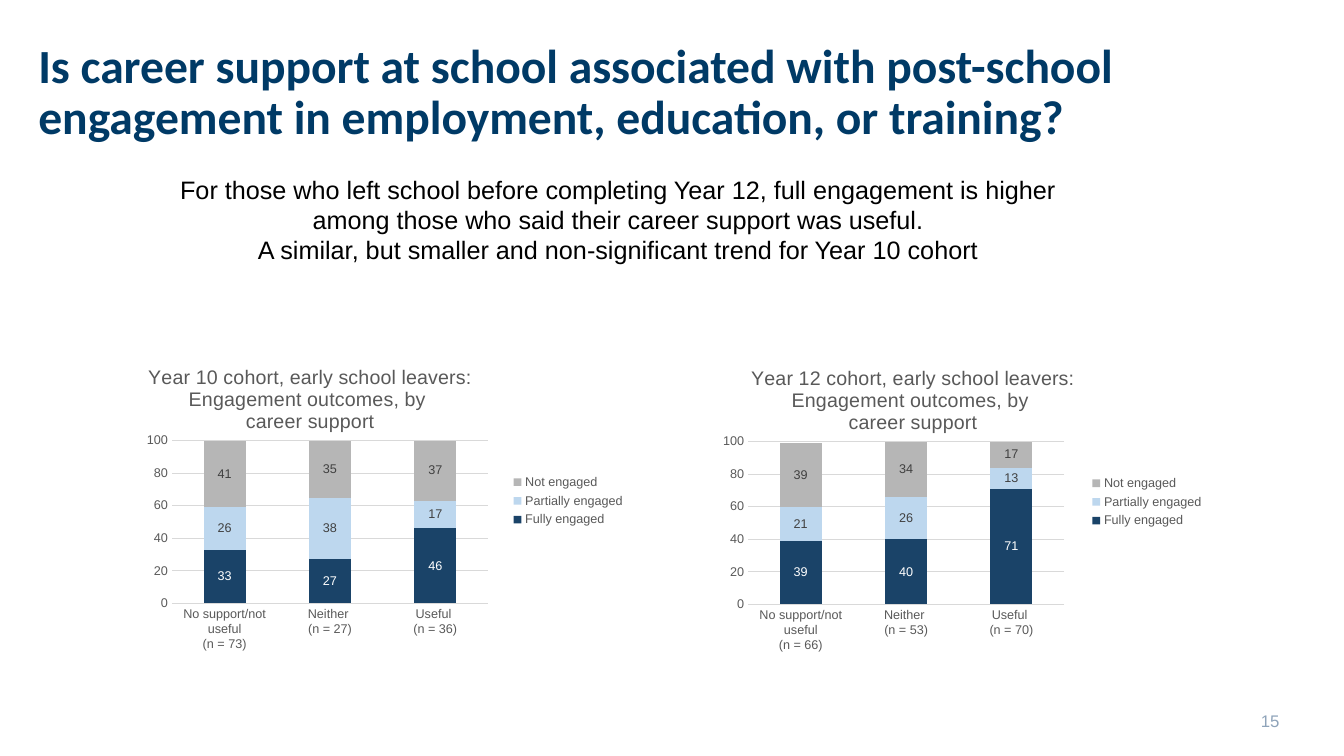
from lxml import etree
from pptx import Presentation
from pptx.chart.data import CategoryChartData
from pptx.dml.color import RGBColor
from pptx.enum.chart import XL_CHART_TYPE, XL_LEGEND_POSITION, XL_TICK_MARK
from pptx.enum.text import MSO_ANCHOR, PP_ALIGN
from pptx.oxml import parse_xml
from pptx.oxml.ns import nsdecls, qn
from pptx.util import Inches, Pt

NAVY = RGBColor(0x00, 0x3A, 0x66)
BLACK = RGBColor(0, 0, 0)
WHITE = RGBColor(0xFF, 0xFF, 0xFF)
PAGE_BLUE = RGBColor(0x8F, 0xA4, 0xBA)
AXIS_TEXT = RGBColor(0x59, 0x59, 0x59)
LABEL_GRAY = RGBColor(0x40, 0x40, 0x40)
GRID = RGBColor(0xD9, 0xD9, 0xD9)
DARK_BLUE = RGBColor(0x1A, 0x43, 0x68)
LIGHT_BLUE = RGBColor(0xBD, 0xD7, 0xEE)
GRAY = RGBColor(0xB6, 0xB6, 0xB6)

HEADING = ("Is career support at school associated with post-school "
           "engagement in employment, education, or training?")
FINDINGS = [
    "For those who left school before completing Year 12, full engagement is higher "
    "among those who said their career support was useful.",
    "A similar, but smaller and non-significant trend for Year 10 cohort",
]
PAGE = "15"
SUPPORT = ["No support/not useful", "Neither ", "Useful "]
OUTCOMES = [
    ("Fully engaged", DARK_BLUE, WHITE),
    ("Partially engaged", LIGHT_BLUE, LABEL_GRAY),
    ("Not engaged", GRAY, LABEL_GRAY),
]
COHORTS = [
    {"year": 10, "sizes": (73, 27, 36), "left": 1.3, "top": 3.43, "plot_left": 0.081,
     "shares": [(33, 27, 46), (26, 38, 17), (41, 35, 37)]},
    {"year": 12, "sizes": (66, 53, 70), "left": 7.04, "top": 3.44, "plot_left": 0.076,
     "shares": [(39, 40, 71), (21, 26, 13), (39, 34, 17)]},
]
CHART_SIZE = (5, 3.08)
PLOT_TOP, PLOT_WIDTH, PLOT_HEIGHT = 0.306, 0.627, 0.524
TITLE_TOP = 0.05


def style(font, size, color, name="Arial", bold=False):
    font.size, font.name, font.bold = Pt(size), name, bold
    font.color.rgb = color


def manual_layout(x, y, w=None, h=None):
    layout = parse_xml(f"<c:layout {nsdecls('c')}><c:manualLayout/></c:layout>")
    settings = [("xMode", "edge"), ("yMode", "edge"), ("x", x), ("y", y)]
    if w is not None:
        settings = [("layoutTarget", "inner")] + settings + [("w", w), ("h", h)]
    for tag, value in settings:
        etree.SubElement(layout[0], qn(f"c:{tag}")).set("val", str(value))
    return layout


def place(parent, layout):
    for old in parent.findall(qn("c:layout")):
        parent.remove(old)
    tx = parent.find(qn("c:tx"))
    parent.insert(0 if tx is None else 1, layout)


def write(frame, lines, size, color, align, name="Arial", bold=False):
    frame.word_wrap = True
    frame.text = "\n".join(lines)
    for paragraph in frame.paragraphs:
        paragraph.alignment = align
        style(paragraph.font, size, color, name, bold)


def no_margins(frame):
    frame.margin_left = frame.margin_right = frame.margin_top = frame.margin_bottom = 0


def add_cohort(slide, cohort):
    data = CategoryChartData(number_format="0")
    data.categories = [f"{s}\n(n = {n})" for s, n in zip(SUPPORT, cohort["sizes"])]
    for (outcome, _, _), shares in zip(OUTCOMES, cohort["shares"]):
        data.add_series(outcome, shares)
    box = [Inches(v) for v in (cohort["left"], cohort["top"], *CHART_SIZE)]
    chart = slide.shapes.add_chart(XL_CHART_TYPE.COLUMN_STACKED, *box, data).chart
    style(chart.font, 10, BLACK)

    caption = [f"Year {cohort['year']} cohort, early school leavers:",
               "Engagement outcomes, by ", "career support"]
    chart.has_title = True
    chart.chart_title.include_in_layout = False
    write(chart.chart_title.text_frame, caption, 14, AXIS_TEXT, PP_ALIGN.CENTER)
    title_left = 0.028 if cohort["year"] == 10 else 0.076
    place(chart.chart_title._element, manual_layout(title_left, TITLE_TOP))
    place(chart._chartSpace.chart.plotArea,
          manual_layout(cohort["plot_left"], PLOT_TOP, PLOT_WIDTH, PLOT_HEIGHT))

    chart.has_legend = True
    chart.legend.position = XL_LEGEND_POSITION.RIGHT
    chart.legend.include_in_layout = False
    style(chart.legend.font, 9, AXIS_TEXT)

    for axis in (chart.category_axis, chart.value_axis):
        axis.major_tick_mark = axis.minor_tick_mark = XL_TICK_MARK.NONE
        style(axis.tick_labels.font, 9, AXIS_TEXT)
    percent = chart.value_axis
    percent.minimum_scale, percent.maximum_scale, percent.major_unit = 0, 100, 20
    percent.format.line.fill.background()
    for line in (chart.category_axis.format.line, percent.major_gridlines.format.line):
        line.color.rgb, line.width = GRID, Pt(0.75)

    plot = chart.plots[0]
    plot.gap_width, plot.overlap, plot.vary_by_categories = 150, 100, False
    for series, (_, fill, label) in zip(plot.series, OUTCOMES):
        series.format.fill.solid()
        series.format.fill.fore_color.rgb = fill
        labels = series.data_labels
        labels.show_value = True
        labels.number_format, labels.number_format_is_linked = "0", False
        style(labels.font, 9, label)


def main():
    deck = Presentation()
    deck.slide_width, deck.slide_height = Inches(13.33), Inches(7.5)
    slide = deck.slides.add_slide(deck.slide_layouts[5])

    heading = slide.shapes.title
    heading.left, heading.top, heading.width, heading.height = map(
        Inches, (0.38, 0.42, 11.5, 1.17))
    no_margins(heading.text_frame)
    heading.text_frame.vertical_anchor = MSO_ANCHOR.TOP
    write(heading.text_frame, [HEADING], 34, NAVY, PP_ALIGN.LEFT, "Calibri", True)
    heading.text_frame.paragraphs[0].line_spacing = 0.9

    findings = slide.shapes.add_textbox(*map(Inches, (1.66, 1.68, 8.94, 1.01)))
    write(findings.text_frame, FINDINGS, 18, BLACK, PP_ALIGN.CENTER)

    for cohort in COHORTS:
        add_cohort(slide, cohort)

    page = slide.shapes.add_textbox(*map(Inches, (9.69, 6.95, 3, 0.4)))
    no_margins(page.text_frame)
    page.text_frame.vertical_anchor = MSO_ANCHOR.MIDDLE
    write(page.text_frame, [PAGE], 12, PAGE_BLUE, PP_ALIGN.RIGHT)

    deck.save("out.pptx")


if __name__ == "__main__":
    main()
